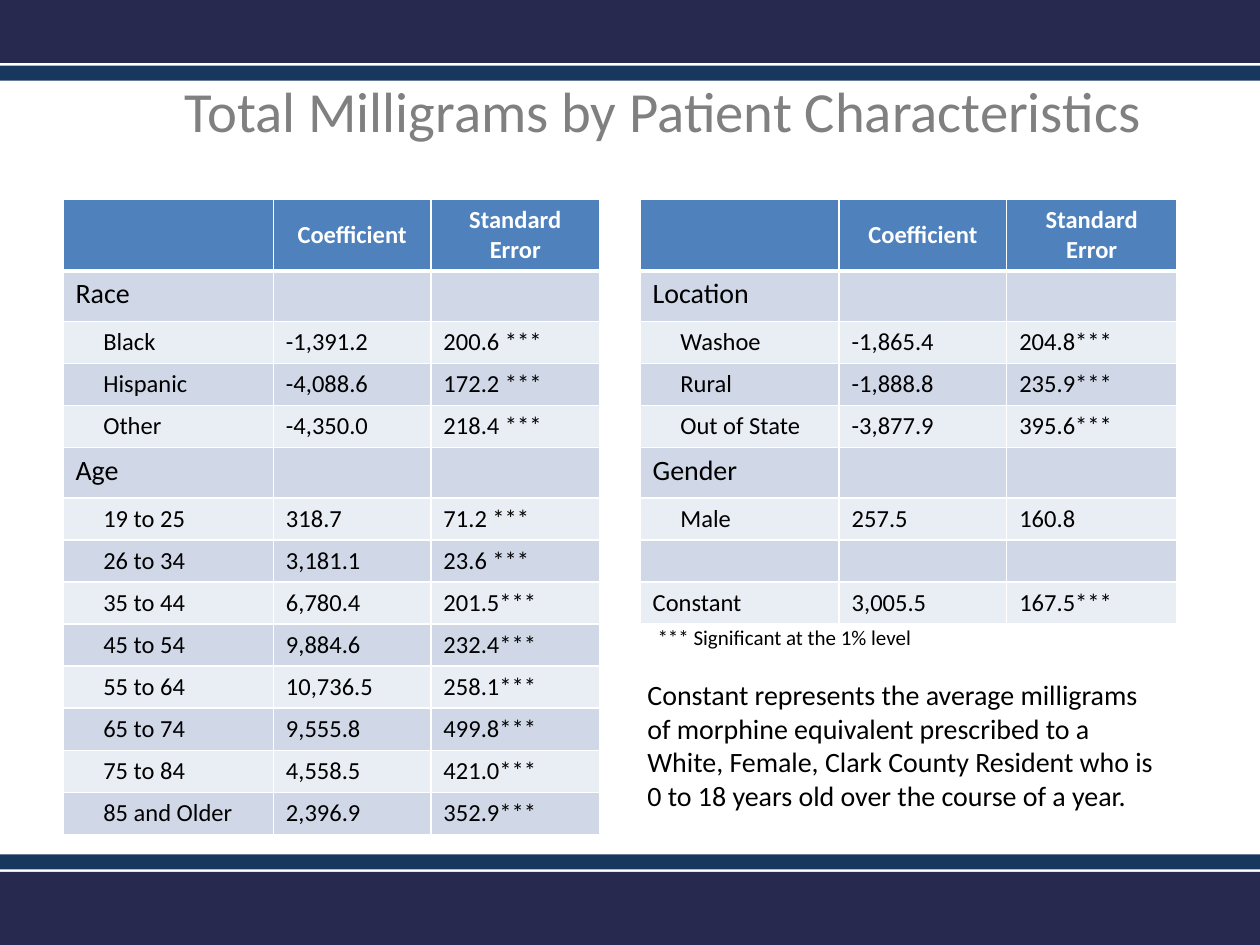
from lxml import etree
from pptx import Presentation
from pptx.dml.color import RGBColor
from pptx.enum import shapes, text
from pptx.oxml.ns import qn
from pptx.util import Inches, Pt

NAVY = RGBColor(0x28, 0x29, 0x4E)
BLUE = RGBColor(0x17, 0x37, 0x5E)
GREY = RGBColor(0x80, 0x80, 0x80)
HEADER = RGBColor(0x4F, 0x81, 0xBD)
BANDS = (RGBColor(0xE9, 0xED, 0xF4), RGBColor(0xD0, 0xD8, 0xE8))
WHITE = RGBColor(0xFF, 0xFF, 0xFF)
BLACK = RGBColor(0, 0, 0)
FONT = "Calibri"

BARS = [  # top, height, colour
    (0, 0.5, NAVY),
    (0.52, 0.12, BLUE),
    (6.92, 0.58, NAVY),
    (6.78, 0.12, BLUE),
]
TITLE = "Total Milligrams by Patient Characteristics"
FOOTNOTE = "*** Significant at the 1% level"
EXPLANATION = (
    "Constant represents the average milligrams of morphine equivalent "
    "prescribed to a White, Female, Clark County Resident who is "
    "0 to 18 years old over the course of a year."
)
COLUMN_HEADS = ("", "Coefficient", "Standard Error")
SECTIONS = {"Race", "Age", "Location", "Gender"}
UNINDENTED = SECTIONS | {"Constant"}
RACE_AND_AGE = [
    ("Race", "", ""),
    ("Black", "-1,391.2", "200.6 ***"),
    ("Hispanic", "-4,088.6", "172.2 ***"),
    ("Other", "-4,350.0", "218.4 ***"),
    ("Age", "", ""),
    ("19 to 25", "318.7", "71.2 ***"),
    ("26 to 34", "3,181.1", "23.6 ***"),
    ("35 to 44", "6,780.4", "201.5***"),
    ("45 to 54", "9,884.6", "232.4***"),
    ("55 to 64", "10,736.5", "258.1***"),
    ("65 to 74", "9,555.8", "499.8***"),
    ("75 to 84", "4,558.5", "421.0***"),
    ("85 and Older", "2,396.9", "352.9***"),
]
LOCATION_AND_GENDER = [
    ("Location", "", ""),
    ("Washoe", "-1,865.4", "204.8***"),
    ("Rural", "-1,888.8", "235.9***"),
    ("Out of State", "-3,877.9", "395.6***"),
    ("Gender", "", ""),
    ("Male", "257.5", "160.8"),
    ("", "", ""),
    ("Constant", "3,005.5", "167.5***"),
]
TABLES = [  # left, column widths, rows
    (0.5, (1.67, 1.25, 1.34), RACE_AND_AGE),
    (5.08, (1.58, 1.33, 1.35), LOCATION_AND_GENDER),
]
TABLE_TOP = 1.58
HEADER_HEIGHT, SECTION_HEIGHT, ROW_HEIGHT = 0.57, 0.4, 0.33


def style_font(paragraph, size, color, bold=False):
    font = paragraph.font
    font.name, font.size, font.bold = FONT, Pt(size), bold
    font.color.rgb = color


def add_text(slide, box, content, size, color):
    frame = slide.shapes.add_textbox(*map(Inches, box)).text_frame
    frame.word_wrap = True
    frame.text = content
    style_font(frame.paragraphs[0], size, color)
    return frame


def add_borders(cell, bottom_width):
    properties = cell._tc.get_or_add_tcPr()
    for side, width in (("L", 1), ("R", 1), ("T", 1), ("B", bottom_width)):
        line = etree.SubElement(properties, qn(f"a:ln{side}"), w=str(Pt(width)))
        fill = etree.SubElement(line, qn("a:solidFill"))
        etree.SubElement(fill, qn("a:srgbClr"), val=str(WHITE))


def fill_cell(cell, content, size, color, background, header=False):
    add_borders(cell, 3 if header else 1)
    cell.fill.solid()
    cell.fill.fore_color.rgb = background
    if content:
        cell.text = content
    paragraph = cell.text_frame.paragraphs[0]
    if not content:  # an empty line takes its height from the end mark
        etree.SubElement(paragraph._p, qn("a:endParaRPr"), sz=str(size * 100))
    style_font(paragraph, size, color, header)
    if header:
        paragraph.alignment = text.PP_ALIGN.CENTER
        cell.vertical_anchor = text.MSO_ANCHOR.MIDDLE


def add_regression_table(slide, left, widths, rows):
    heights = [HEADER_HEIGHT] + [
        SECTION_HEIGHT if row[0] in SECTIONS else ROW_HEIGHT for row in rows
    ]
    table = slide.shapes.add_table(
        len(heights), len(widths), Inches(left), Inches(TABLE_TOP),
        Inches(sum(widths)), Inches(sum(heights)),
    ).table
    for column, width in zip(table.columns, widths):
        column.width = Inches(width)
    for table_row, height in zip(table.rows, heights):
        table_row.height = Inches(height)
    for column, head in enumerate(COLUMN_HEADS):
        fill_cell(table.cell(0, column), head, 14, WHITE, HEADER, header=True)
    for index, row in enumerate(rows, start=1):
        size = 16 if row[0] in SECTIONS else 14
        for column, content in enumerate(row):
            fill_cell(table.cell(index, column), content, size, BLACK, BANDS[index % 2])
        if row[0] not in UNINDENTED:
            table.cell(index, 0).margin_left = Inches(0.32)


def main():
    presentation = Presentation()
    presentation.slide_width, presentation.slide_height = Inches(10), Inches(7.5)
    slide = presentation.slides.add_slide(presentation.slide_layouts[6])

    for top, height, color in BARS:
        bar = slide.shapes.add_shape(
            shapes.MSO_SHAPE.RECTANGLE, 0, Inches(top), Inches(10), Inches(height)
        )
        bar.shadow.inherit = False
        bar.fill.solid()
        bar.fill.fore_color.rgb = color
        bar.line.fill.background()

    title = add_text(slide, (1.17, 0.42, 8.18, 0.9), TITLE, 32.4, GREY)
    title.vertical_anchor = text.MSO_ANCHOR.MIDDLE
    title.paragraphs[0].alignment = text.PP_ALIGN.CENTER

    for left, widths, rows in TABLES:
        add_regression_table(slide, left, widths, rows)

    add_text(slide, (5.12, 4.91, 4.08, 0.3), FOOTNOTE, 12, BLACK)
    add_text(slide, (5.04, 5.33, 4.25, 1.45), EXPLANATION, 16, BLACK)
    presentation.save("out.pptx")


if __name__ == "__main__":
    main()
